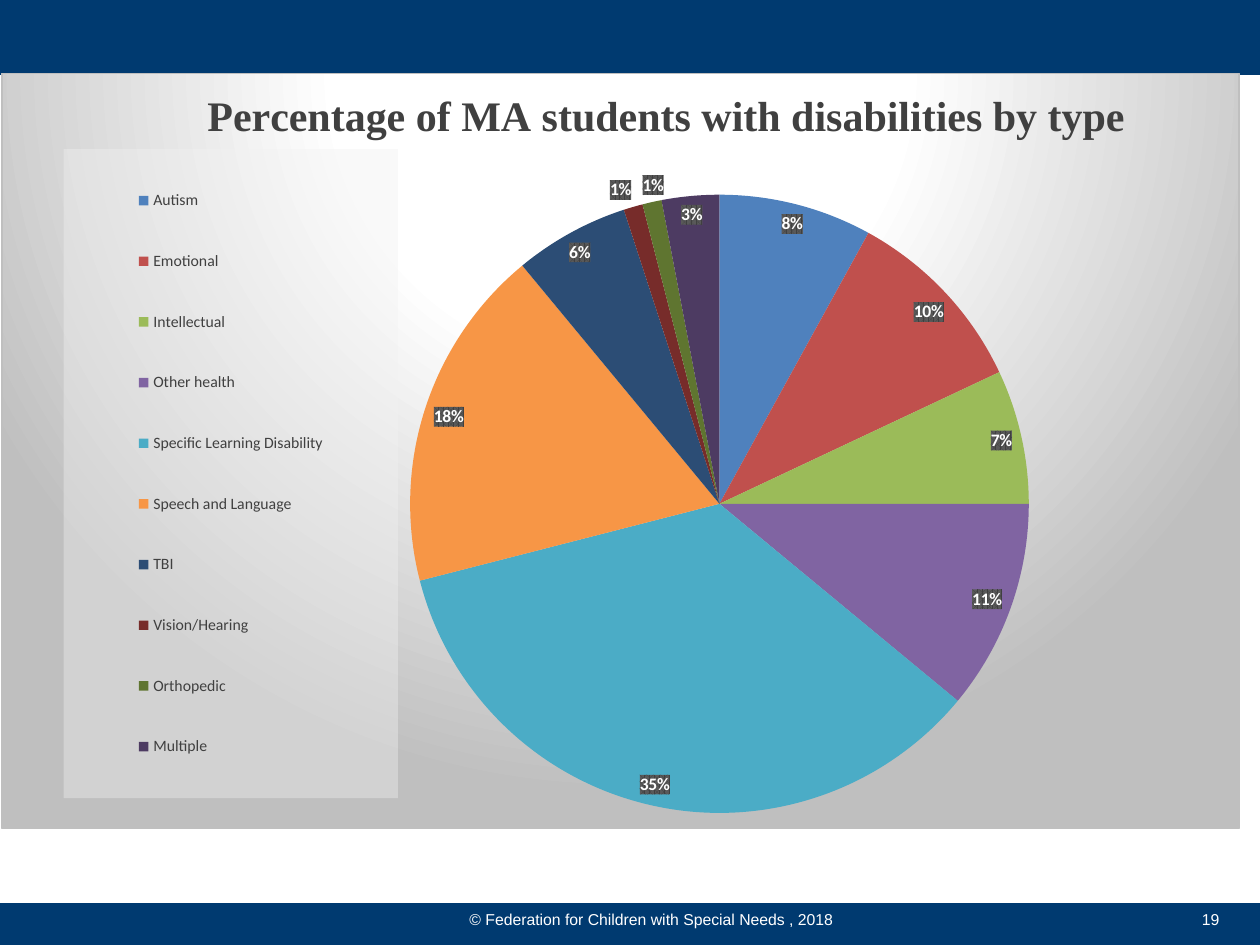
from lxml import etree
from pptx import Presentation
from pptx.chart.data import CategoryChartData
from pptx.dml.color import RGBColor
from pptx.enum.chart import XL_CHART_TYPE, XL_LABEL_POSITION, XL_LEGEND_POSITION
from pptx.enum.shapes import MSO_SHAPE
from pptx.oxml import parse_xml
from pptx.oxml.ns import nsdecls, qn
from pptx.util import Inches, Pt

PIE = XL_CHART_TYPE.PIE
BEST = XL_LABEL_POSITION.BEST_FIT
LEFT = XL_LEGEND_POSITION.LEFT
RECT = MSO_SHAPE.RECTANGLE
NAVY, WHITE, DARK, GREY = "003A70", "FFFFFF", "404040", "BFBFBF"

SHARES = [
    ("Autism", 8, "4F81BD"),
    ("Emotional", 10, "C0504D"),
    ("Intellectual", 7, "9BBB59"),
    ("Other health", 11, "8064A2"),
    ("Specific Learning Disability", 35, "4BACC6"),
    ("Speech and Language", 18, "F79646"),
    ("TBI", 6, "2C4D75"),
    ("Vision/Hearing", 1, "772C2A"),
    ("Orthopedic", 1, "5F7530"),
    ("Multiple", 3, "4D3B62"),
]


def paint(color, code):
    """Set a colour format from a hex string."""
    color.rgb = RGBColor.from_string(code)


def style(font, name, size, code, bold=False):
    """Set the face, size, colour and weight of a font."""
    font.name, font.size, font.bold = name, Pt(size), bold
    paint(font.color, code)


def hue(code, alpha=100):
    """Return the XML of one colour."""
    return f'<a:srgbClr val="{code}"><a:alpha val="{alpha * 1000}"/></a:srgbClr>'


def coat(part, body):
    """Give a chart part its fill and line, just before its text style."""
    look = parse_xml(f'<c:spPr {nsdecls("c", "a")}>{body}</c:spPr>')
    part.find(qn("c:txPr")).addprevious(look)


def settle(part, index, **spots):
    """Place a chart part by fractions of the chart box."""
    for old in part.findall(qn("c:layout")):
        part.remove(old)
    layout = etree.Element(qn("c:layout"))
    manual = etree.SubElement(layout, qn("c:manualLayout"))
    for side in ("xMode", "yMode"):
        etree.SubElement(manual, qn(f"c:{side}")).set("val", "edge")
    for key, value in spots.items():
        etree.SubElement(manual, qn(f"c:{key}")).set("val", str(value))
    part.insert(index, layout)


def add_bar(slide, x, y, w, h):
    """Add a navy band across the slide."""
    bar = slide.shapes.add_shape(RECT, x, y, w, h)
    bar.shadow.inherit = False
    bar.fill.solid()
    paint(bar.fill.fore_color, NAVY)
    paint(bar.line.color, NAVY)
    bar.line.width = Pt(2)


def add_footer(slide, x, y, w, h):
    """Add the credit and the page number on centre and right tabs."""
    frame = slide.shapes.add_textbox(x, y, w, h).text_frame
    frame.word_wrap = True
    para = frame.paragraphs[0]
    tabs = etree.SubElement(para._p.get_or_add_pPr(), qn("a:tabLst"))
    for spot, side in ((5.07, "ctr"), (9.58, "r")):
        tab = etree.SubElement(tabs, qn("a:tab"))
        tab.set("pos", str(Inches(spot)))
        tab.set("algn", side)
    for text in ("\t© Federation for Children with Special Needs , 2018", "\t19"):
        run = para.add_run()
        run.text = text
        style(run.font, "Arial", 9, WHITE)


def add_title(chart):
    """Add the chart title."""
    title = chart.chart_title
    run = title.text_frame.paragraphs[0].add_run()
    run.text = "Percentage of MA students with disabilities by type"
    style(run.font, "Times New Roman", 24, DARK, True)
    settle(title._element, 1, x=0.16, y=0.01)


def add_legend(chart):
    """Add the legend on its pale panel."""
    chart.has_legend = True
    legend = chart.legend
    legend.position = LEFT
    legend.include_in_layout = False
    style(legend.font, "Calibri", 9, DARK)
    settle(legend._element, 1, x=0.05, y=0.1, w=0.27, h=0.86)
    coat(legend._element, f'<a:solidFill>{hue("F2F2F2", 39)}</a:solidFill>')


def add_labels(series):
    """Add the percentages on dark patterned tags."""
    labels = series.data_labels
    labels.show_percentage, labels.show_value = True, False
    labels.number_format, labels.number_format_is_linked = "0%", False
    labels.position = BEST
    style(labels.font, "Calibri", 10, WHITE, True)
    coat(labels._element, f'<a:pattFill prst="pct75"><a:fgClr>{hue(DARK)}</a:fgClr>'
         f'<a:bgClr>{hue("595959")}</a:bgClr></a:pattFill>')


def add_pie(slide, x, y, w, h):
    """Add the pie chart on its shaded ground."""
    names, values, codes = zip(*SHARES)
    data = CategoryChartData()
    data.categories = names
    data.add_series("Series 1", values)
    chart = slide.shapes.add_chart(PIE, x, y, w, h, data).chart
    style(chart.font, "Calibri", 10, "000000")
    stops = "".join(f'<a:gs pos="{pos * 1000}">{hue(code)}</a:gs>'
                    for pos, code in ((0, WHITE), (39, WHITE), (100, GREY)))
    space = chart._chartSpace
    coat(space, f'<a:gradFill><a:gsLst>{stops}</a:gsLst><a:path path="circle">'
         '<a:fillToRect l="50000" t="-80000" r="50000" b="180000"/></a:path></a:gradFill>'
         f'<a:ln w="{Pt(0.75)}"><a:solidFill>{hue(GREY)}</a:solidFill></a:ln>')
    add_title(chart)
    add_legend(chart)
    plot = chart.plots[0]
    plot.vary_by_categories = True
    series = plot.series[0]
    for index, code in enumerate(codes):
        fill = series.points[index].format.fill
        fill.solid()
        paint(fill.fore_color, code)
    add_labels(series)
    area = space.find(f'{qn("c:chart")}/{qn("c:plotArea")}')
    settle(area, 0, layoutTarget="inner", x=0.33, y=0.16, w=0.5, h=0.82)
    target = area.find(f'.//{qn("c:layoutTarget")}')
    target.getparent().insert(0, target)


def main():
    """Build and save the slide."""
    deck = Presentation()
    deck.slide_width, deck.slide_height = Inches(10), Inches(7.5)
    slide = deck.slides.add_slide(deck.slide_layouts[6])
    add_bar(slide, 0, 0, Inches(10), Inches(0.58))
    add_bar(slide, 0, Inches(7.18), Inches(10), Inches(0.32))
    add_footer(slide, 0, Inches(7.17), Inches(9.99), Inches(0.25))
    add_pie(slide, Inches(0.01), Inches(0.58), Inches(9.83), Inches(6))
    deck.save("out.pptx")


if __name__ == "__main__":
    main()
